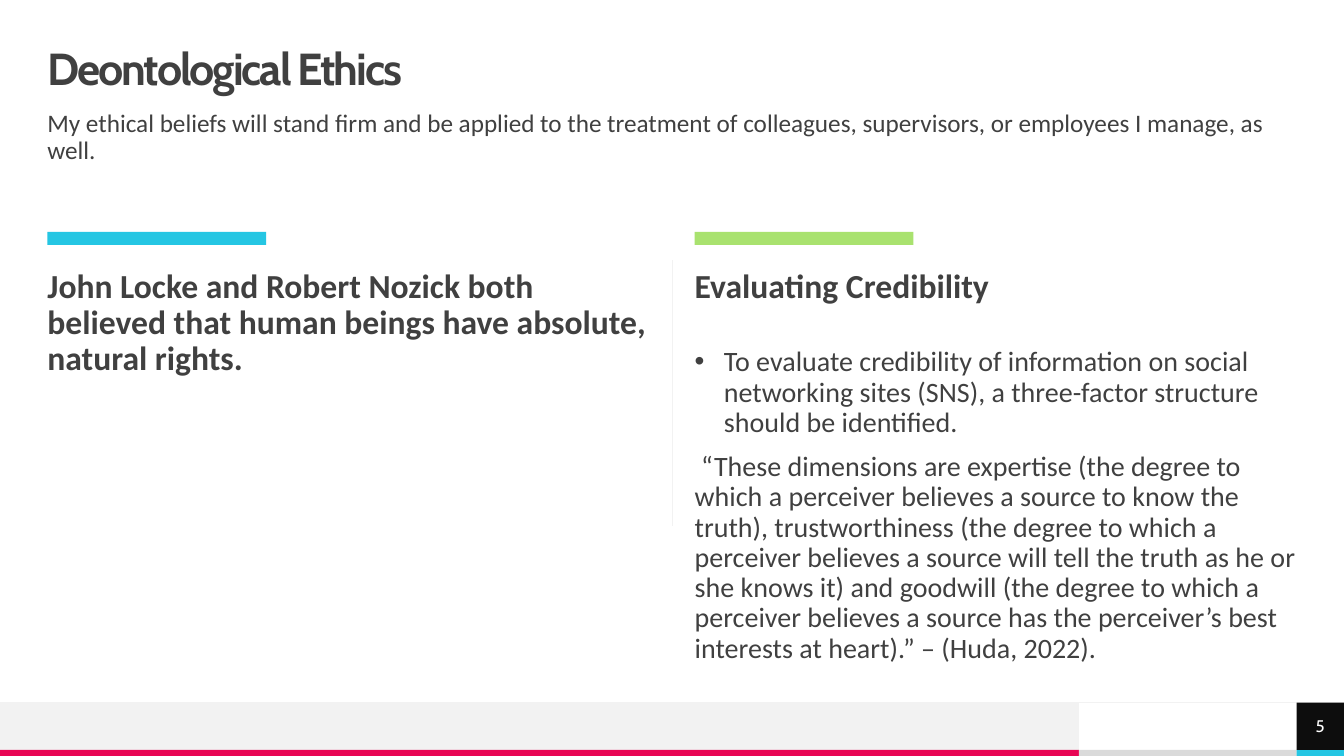
from lxml import etree
from pptx import Presentation
from pptx.dml.color import RGBColor
from pptx.enum.shapes import MSO_CONNECTOR as Connector, MSO_SHAPE as Shape
from pptx.enum.text import MSO_ANCHOR as Anchor, PP_ALIGN as Align
from pptx.oxml.ns import qn
from pptx.util import Inches, Pt

CYAN, GREEN, PINK = "25C6E3", "A9E26F", "E80554"
DARK, BLACK, WHITE = "404040", "0D0D0D", "FFFFFF"
PALE, GREY = "F2F2F2", "DADADA"

LEFT, RIGHT_COLUMN = 0.47, 6.89
FULL_WIDTH, COLUMN_WIDTH = 12.4, 5.98
FOOTER_TOP, FOOTER_HEIGHT, STRIP_TOP, STRIP_HEIGHT = 6.97, 0.47, 7.44, 0.06
BAND_WIDTH, NUMBER_LEFT, SLIDE_WIDTH = 10.7, 12.86, 13.33

BODY = {"line_spacing": 0.9, "space_before": Pt(10)}
TITLE_FONT = {"name": "Cabin", "size": Pt(32), "bold": True}
LEAD_FONT = {"name": "Calibri", "size": Pt(18)}
HEADING_FONT = {"name": "Calibri", "size": Pt(24), "bold": True}
DETAIL_FONT = {"name": "Calibri", "size": Pt(20)}
NUMBER_FONT = {"name": "Cabin", "size": Pt(12)}


def rgb(value):
    return RGBColor.from_string(value)


def apply(target, values):
    for name, value in values.items():
        setattr(target, name, value)


def add_bar(slide, left, top, width, height, color):
    bar = slide.shapes.add_shape(
        Shape.RECTANGLE, Inches(left), Inches(top), Inches(width), Inches(height))
    bar.shadow.inherit = False
    bar.fill.solid()
    bar.fill.fore_color.rgb = rgb(color)
    bar.line.fill.background()
    return bar


def add_rule(slide, x1, y1, x2, y2):
    rule = slide.shapes.add_connector(
        Connector.STRAIGHT, Inches(x1), Inches(y1), Inches(x2), Inches(y2))
    rule.line.color.rgb = rgb(PALE)
    rule.line.width = Pt(0.5)
    etree.SubElement(rule._element.spPr, qn("a:effectLst"))


def set_frame(frame, anchor):
    apply(frame, {"word_wrap": True, "vertical_anchor": anchor,
                  "margin_left": 0, "margin_top": 0,
                  "margin_right": 0, "margin_bottom": 0})


def add_run(paragraph, text, font, color=DARK, tracking=0):
    run = paragraph.add_run()
    run.text = text
    apply(run.font, font)
    run.font.color.rgb = rgb(color)
    if tracking:
        run._r.get_or_add_rPr().set("spc", str(round(tracking * 100)))


def add_bullet(paragraph, indent):
    properties = paragraph._p.get_or_add_pPr()
    properties.set("marL", str(Inches(indent)))
    properties.set("indent", str(-Inches(indent)))
    etree.SubElement(properties, qn("a:buFont")).set("typeface", "Arial")
    etree.SubElement(properties, qn("a:buChar")).set("char", "•")


def add_text(slide, left, top, width, height, texts, font, anchor=Anchor.TOP, tracking=0):
    box = slide.shapes.add_textbox(Inches(left), Inches(top), Inches(width), Inches(height))
    frame = box.text_frame
    set_frame(frame, anchor)
    for index, text in enumerate(texts):
        paragraph = frame.add_paragraph() if index else frame.paragraphs[0]
        apply(paragraph, BODY)
        add_run(paragraph, text, font, tracking=tracking)
    return frame


def add_footer(slide):
    add_bar(slide, 0, FOOTER_TOP, BAND_WIDTH, FOOTER_HEIGHT, PALE)
    strip_edges = [0, BAND_WIDTH, NUMBER_LEFT, SLIDE_WIDTH]
    for start, end, color in zip(strip_edges, strip_edges[1:], (PINK, GREY, CYAN)):
        add_bar(slide, start, STRIP_TOP, end - start, STRIP_HEIGHT, color)
    add_rule(slide, SLIDE_WIDTH, FOOTER_TOP, 0, FOOTER_TOP)

    # Slide number
    number = add_bar(slide, NUMBER_LEFT, FOOTER_TOP, FOOTER_HEIGHT, FOOTER_HEIGHT, BLACK)
    set_frame(number.text_frame, Anchor.MIDDLE)
    paragraph = number.text_frame.paragraphs[0]
    paragraph.alignment = Align.CENTER
    add_run(paragraph, "5", NUMBER_FONT, WHITE)


def add_column(slide, left, color, heading, heading_height):
    add_bar(slide, left, 2.3, 2.17, 0.13, color)
    add_text(slide, left, 2.67, COLUMN_WIDTH, heading_height, [heading], HEADING_FONT)


def main():
    deck = Presentation()
    deck.slide_width, deck.slide_height = Inches(SLIDE_WIDTH), Inches(7.5)
    slide = deck.slides.add_slide(deck.slide_layouts[6])

    add_footer(slide)

    # Title and lead sentence
    add_text(slide, LEFT, 0.47, FULL_WIDTH, 0.47, ["Deontological Ethics"],
             TITLE_FONT, Anchor.MIDDLE, -1.5)
    add_text(slide, LEFT, 1.1, FULL_WIDTH, 0.54, [
        "My ethical beliefs will stand firm and be applied to the treatment of "
        "colleagues, supervisors, or employees I manage, as well."], LEAD_FONT)

    # Two columns with a divider
    add_column(slide, LEFT, CYAN,
               "John Locke and Robert Nozick both believed that human beings "
               "have absolute, natural rights.", 1.28)
    add_rule(slide, 6.67, 2.58, 6.67, 5.22)
    add_column(slide, RIGHT_COLUMN, GREEN, "Evaluating Credibility", 0.39)

    # Details on credibility
    details = add_text(slide, RIGHT_COLUMN, 3.45, COLUMN_WIDTH, 3.32, [
        "To evaluate credibility of information on social networking sites (SNS), "
        "a three-factor structure should be identified.",
        " “These dimensions are expertise (the degree to which a perceiver believes "
        "a source to know the truth), trustworthiness (the degree to which a perceiver "
        "believes a source will tell the truth as he or she knows it) and goodwill "
        "(the degree to which a perceiver believes a source has the perceiver’s best "
        "interests at heart).” – (Huda, 2022)."], DETAIL_FONT)
    add_bullet(details.paragraphs[0], 0.29)

    deck.save("out.pptx")


if __name__ == "__main__":
    main()
